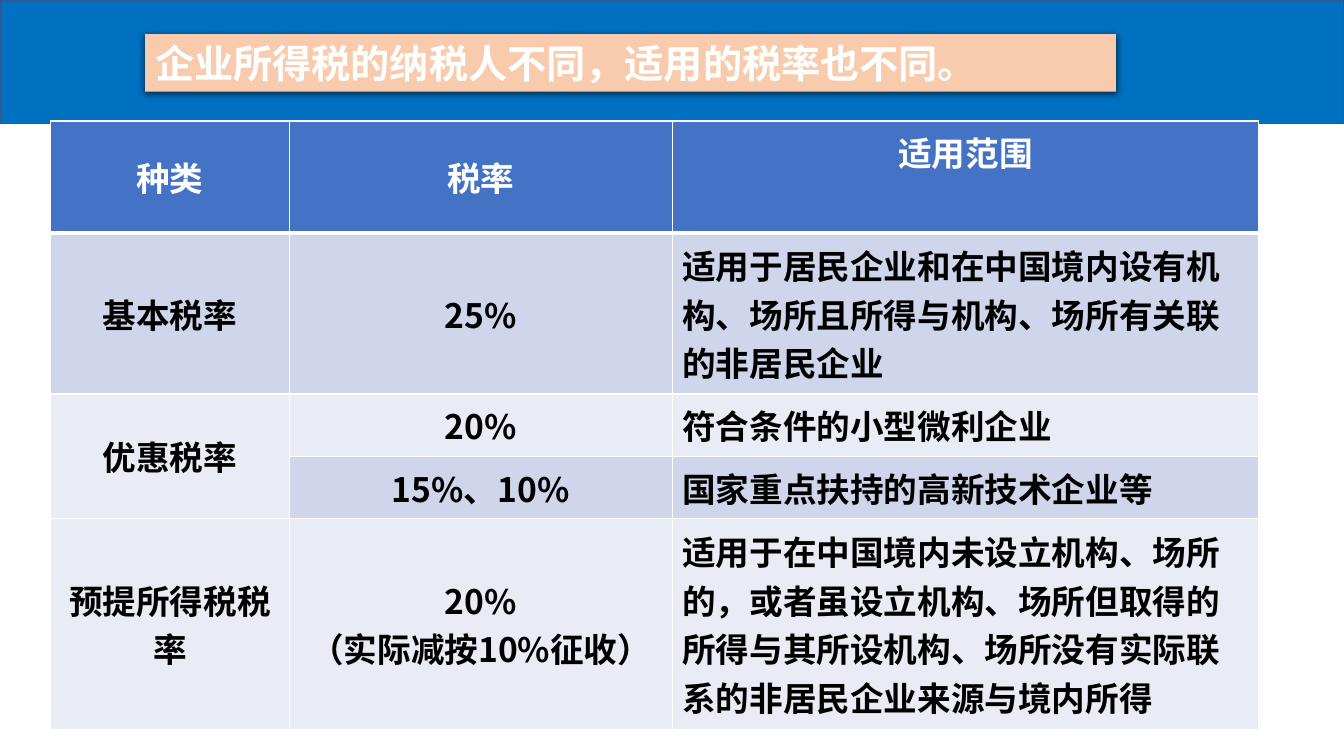
"""Build the slide that compares enterprise income tax rates by taxpayer."""
from lxml import etree
from pptx import Presentation
from pptx import util as u
from pptx.dml.color import RGBColor
from pptx.enum import shapes, text
from pptx.oxml import ns

FONT = "Noto Sans CJK SC"
COLOURS = {
    "banner": "0070C0", "banner_line": "325491", "title": "F8CBAD",
    "header": "4472C4", "dark_band": "CFD5EA", "light_band": "E9EBF5",
    "white": "FFFFFF", "black": "000000",
}
COLUMN_WIDTHS = [6.02, 9.65, 14.78]
ROW_HEIGHTS = [2.82, 4.06, 1.57, 1.57, 5.31]
ROW_FILLS = ["header", "dark_band", "light_band", "dark_band", "light_band"]
RATES = [
    ["种类", "税率", "适用范围"],
    ["基本税率", "25%", "适用于居民企业和在中国境内设有机构、场所且所得与机构、场所有关联的非居民企业"],
    ["优惠税率", "20%", "符合条件的小型微利企业"],
    ["", "15%、10%", "国家重点扶持的高新技术企业等"],
    ["预提所得税税率", "20%\n（实际减按10%征收）",
     "适用于在中国境内未设立机构、场所的，或者虽设立机构、场所但取得的"
     "所得与其所设机构、场所没有实际联系的非居民企业来源与境内所得"],
]


def colour(name):
    return RGBColor.from_string(COLOURS[name])


def add_element(parent, tag, **attributes):
    return etree.SubElement(parent, ns.qn(tag), attributes)


def add_solid_colour(parent, name):
    return add_element(parent, "a:srgbClr", val=COLOURS[name])


def write_text(frame, words, size, colour_name, align):
    for index, line in enumerate(words.split("\n")):
        para = frame.add_paragraph() if index else frame.paragraphs[0]
        para.alignment = align
        span = para.add_run()
        span.text = line
        span.font.size = u.Pt(size)
        span.font.bold = True
        span.font.color.rgb = colour(colour_name)
        span.font.name = FONT
        add_element(span.font._element, "a:ea", typeface=FONT)


def add_bar(page, left, top, width, height, fill):
    bar = page.shapes.add_shape(shapes.MSO_SHAPE.RECTANGLE, u.Cm(left), u.Cm(top),
                                u.Cm(width), u.Cm(height))
    bar.shadow.inherit = False
    bar.fill.solid()
    bar.fill.fore_color.rgb = colour(fill)
    bar.line.fill.background()
    return bar


def add_banner(page):
    banner = add_bar(page, 0, 0, 33.87, 3.12, "banner")
    banner.line.color.rgb = colour("banner_line")
    banner.line.width = u.Pt(1)


def add_title(page, words):
    bar = add_bar(page, 3.66, 0.86, 24.46, 1.45, "title")
    effects = bar._element.spPr.find(ns.qn("a:effectLst"))
    shadow = add_element(effects, "a:outerShdw", blurRad=str(u.Pt(4.5)),
                         dist=str(u.Pt(1.5)), dir="5400000", rotWithShape="0")
    add_element(add_solid_colour(shadow, "black"), "a:alpha", val="63000")
    frame = bar.text_frame
    frame.word_wrap = True
    frame.vertical_anchor = text.MSO_ANCHOR.MIDDLE
    write_text(frame, words, 28, "white", text.PP_ALIGN.LEFT)


def set_borders(cell, widths):
    properties = cell._tc.get_or_add_tcPr()
    for side, width in widths.items():
        line = add_element(properties, f"a:ln{side}", w=str(u.Pt(width)))
        add_solid_colour(add_element(line, "a:solidFill"), "white")


def add_rate_table(page):
    frame = page.shapes.add_table(len(RATES), len(COLUMN_WIDTHS), u.Cm(1.27), u.Cm(3.05),
                                  u.Cm(sum(COLUMN_WIDTHS)), u.Cm(sum(ROW_HEIGHTS)))
    table = frame.table
    for column, width in zip(table.columns, COLUMN_WIDTHS):
        column.width = u.Cm(width)
    for row_index, words_in_row in enumerate(RATES):
        table.rows[row_index].height = u.Cm(ROW_HEIGHTS[row_index])
        is_header = row_index == 0
        for column_index, words in enumerate(words_in_row):
            cell = table.cell(row_index, column_index)
            set_borders(cell, {"L": 1, "R": 1, "T": 3 if row_index == 1 else 1,
                               "B": 3 if is_header else 1})
            cell.fill.solid()
            cell.fill.fore_color.rgb = colour(ROW_FILLS[row_index])
            cell.vertical_anchor = text.MSO_ANCHOR.MIDDLE
            centred = is_header or column_index < 2
            align = text.PP_ALIGN.CENTER if centred else text.PP_ALIGN.LEFT
            if words:
                write_text(cell.text_frame, words, 24,
                           "white" if is_header else "black", align)
    table.cell(0, 2).margin_bottom = u.Cm(1.37)
    table.cell(2, 0).merge(table.cell(3, 0))


def main():
    deck = Presentation()
    deck.slide_width, deck.slide_height = u.Cm(33.87), u.Cm(19.05)
    page = deck.slides.add_slide(deck.slide_layouts[6])
    add_banner(page)
    add_title(page, "企业所得税的纳税人不同，适用的税率也不同。")
    add_rate_table(page)
    deck.save("out.pptx")


if __name__ == "__main__":
    main()
